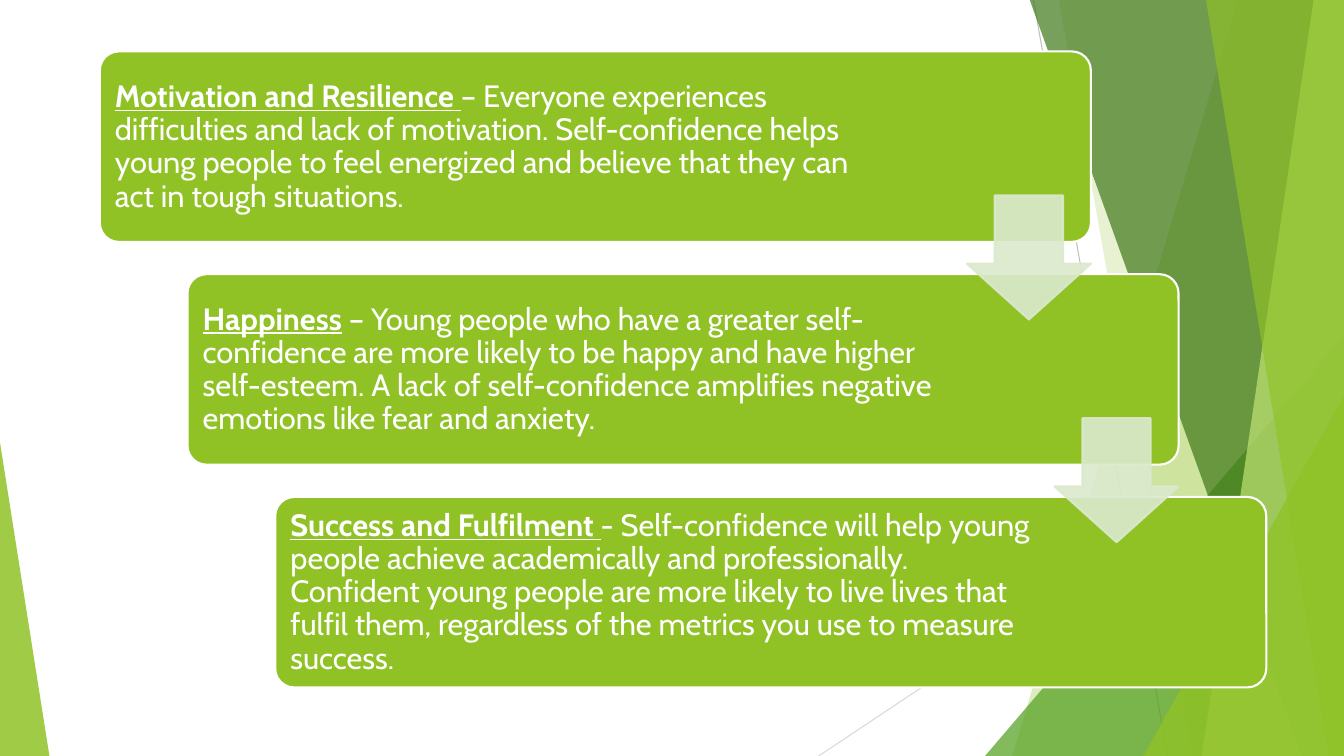
from lxml import etree
from pptx import Presentation
from pptx.dml.color import RGBColor
from pptx.enum import shapes, text
from pptx.oxml import ns
from pptx.util import Inches, Pt

WIDE, HIGH = 13.33, 7.5
GREEN, WHITE, PALE = "90C226", "FFFFFF", "DBE9CD"
KIND = shapes.MSO_SHAPE
STEPS = [
    ("Motivation and Resilience ",
     "– Everyone experiences difficulties and lack of motivation. Self-confidence "
     "helps young people to feel energized and believe that they can act in tough "
     "situations.", 7.79),
    ("Happiness",
     " – Young people who have a greater self-confidence are more likely to be happy "
     "and have higher self-esteem. A lack of self-confidence amplifies negative "
     "emotions like fear and anxiety.", 7.62),
    ("Success and Fulfilment ",
     "- Self-confidence will help young people achieve academically and "
     "professionally. Confident young people are more likely to live lives that "
     "fulfil them, regardless of the metrics you use to measure success.", 7.62),
]


def tint(fill, color, alpha=100):
    """Set a solid colour with its opacity in percent."""
    fill.solid()
    fill.fore_color.rgb = RGBColor.from_string(color)
    if alpha < 100:
        node = fill._xPr.find(ns.qn("a:solidFill"))[0]
        etree.SubElement(node, ns.qn("a:alpha")).set("val", str(alpha * 1000))


def paint(shape, color, alpha=100, edge=None):
    shape.shadow.inherit = False
    tint(shape.fill, color, alpha)
    if edge:
        shape.line.width = Pt(1.5)
        tint(shape.line.fill, edge, alpha)
    else:
        shape.line.fill.background()


def put(slide, kind, box, adjust):
    shape = slide.shapes.add_shape(kind, *map(Inches, box))
    for i, value in enumerate(adjust):
        shape.adjustments[i] = value
    return shape


def rule(slide, start, end, color):
    line = slide.shapes.add_connector(
        shapes.MSO_CONNECTOR.STRAIGHT, *map(Inches, start + end))
    line.line.width = Pt(0.75)
    tint(line.line.fill, color)
    etree.SubElement(line._element.spPr, ns.qn("a:effectLst"))


def shard(slide, top, foot, color, alpha):
    """Fill from a slanted edge to the right side of the slide."""
    edge = [(top, -0.01), (WIDE, -0.01), (WIDE, HIGH), (foot, HIGH)]
    points = [(Inches(x), Inches(y)) for x, y in edge]
    form = slide.shapes.build_freeform(*points[0])
    form.add_line_segments(points[1:], close=True)
    paint(form.convert_to_shape(), color, alpha)


def wedge(slide, left, top, right, tip, color, alpha):
    """Stand a triangle on the foot of the slide."""
    box = left, top, right - left, HIGH - top
    paint(put(slide, KIND.ISOSCELES_TRIANGLE, box, [tip]), color, alpha)


def backdrop(slide):
    rule(slide, (10.25, 0), (11.58, HIGH), "BFBFBF")
    rule(slide, (WIDE, 4.03), (8.12, HIGH), "D9D9D9")
    shard(slide, 12.28, 10.04, GREEN, 30)
    shard(slide, 10.5, 11.83, GREEN, 20)
    wedge(slide, 9.77, 3.33, WIDE, 1, "54A021", 72)
    shard(slide, 10.21, 12.91, "3F7819", 70)
    shard(slide, 13.03, 11.92, "C0E474", 70)
    shard(slide, 11.96, 13.18, GREEN, 65)
    wedge(slide, 11.34, 3.93, WIDE, 1, GREEN, 80)
    wedge(slide, 0, 4.39, 0.49, 0, GREEN, 85)


def card(slide, box, title, body, width):
    left, top, _, height = box
    paint(put(slide, KIND.ROUNDED_RECTANGLE, box, [0.1]), GREEN, edge=WHITE)
    area = left + 0.06, top + 0.06, width, height - 0.11
    frame = slide.shapes.add_textbox(*map(Inches, area)).text_frame
    frame.word_wrap = True
    frame.vertical_anchor = text.MSO_ANCHOR.MIDDLE
    frame.margin_left = frame.margin_right = Inches(0.09)
    frame.margin_top = frame.margin_bottom = Inches(0.09)
    para = frame.paragraphs[0]
    para.line_spacing = 0.9
    for words, strong in ((title, True), (body, False)):
        run = para.add_run()
        run.text = words
        font = run.font
        font.name, font.size = "Cabin", Pt(22)
        font.bold = font.underline = strong
        font.color.rgb = RGBColor.from_string(WHITE)


def stairs(slide, left, top, width, height):
    """Place the cards as descending steps, joined by arrows."""
    right, down, size = 0.87, 2.21, 1.23
    spots = [(left + i * right, top + i * down) for i in range(len(STEPS))]
    for (x, y), step in zip(spots, STEPS):
        card(slide, (x, y, width, height), *step)
    for x, y in spots[:-1]:
        box = x + width - size, y + 1.43, size, size
        paint(put(slide, KIND.DOWN_ARROW, box, [0.55, 0.45]), PALE, 90, PALE)


def main():
    deck = Presentation()
    deck.slide_width, deck.slide_height = Inches(WIDE), Inches(HIGH)
    slide = deck.slides.add_slide(deck.slide_layouts[6])
    backdrop(slide)
    stairs(slide, 0.99, 0.51, 9.83, 1.89)
    deck.save("out.pptx")


if __name__ == "__main__":
    main()
